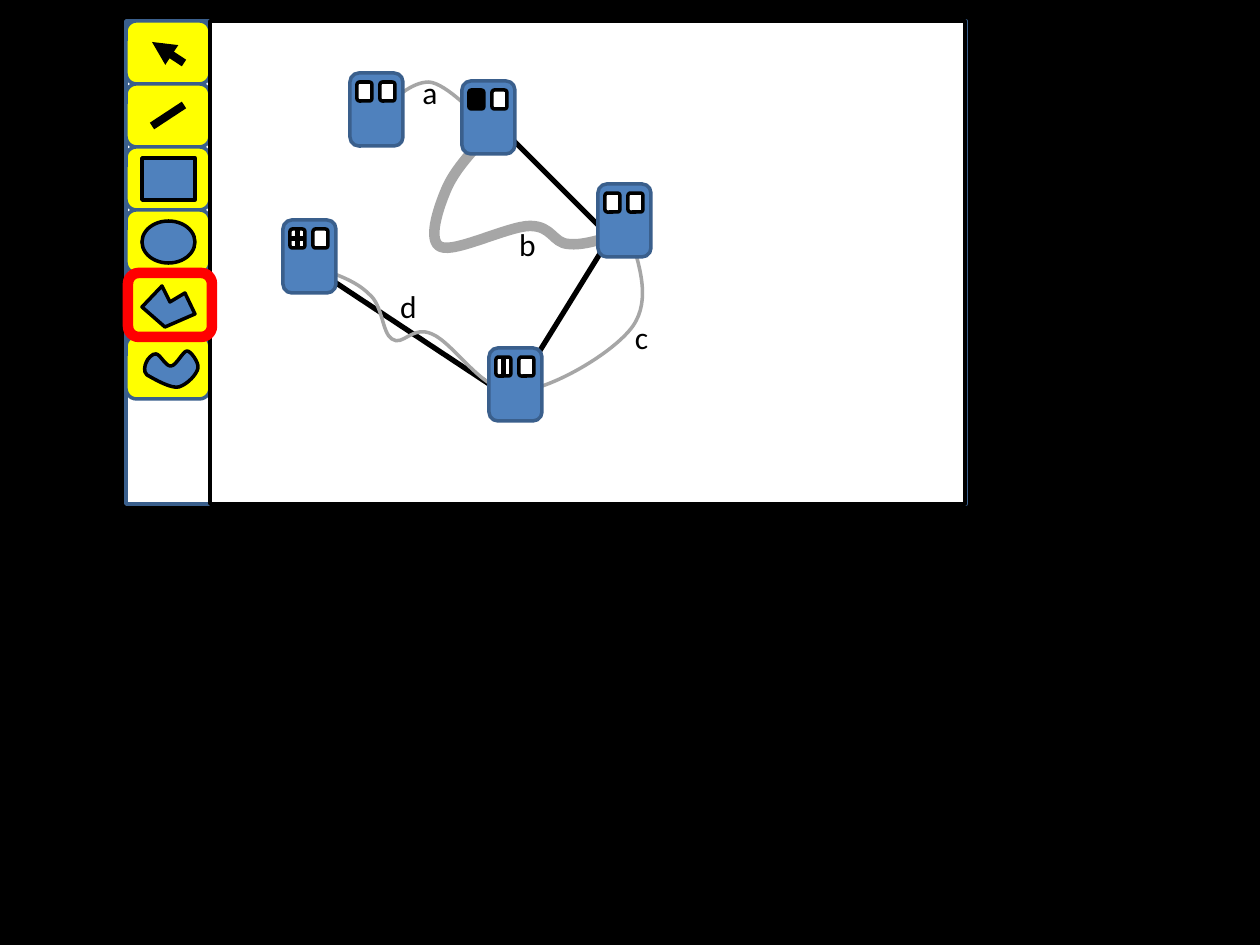
from dataclasses import dataclass

from lxml.etree import SubElement
from pptx import Presentation
from pptx.dml.color import RGBColor
from pptx.enum.shapes import MSO_CONNECTOR, MSO_SHAPE as Shape
from pptx.enum.text import MSO_AUTO_SIZE as AutoSize, PP_ALIGN as Align
from pptx.oxml.ns import qn
from pptx.util import Pt

PX = 914400 / 126  # EMU in one px


@dataclass(frozen=True)
class Theme:
    black: str = "000000"
    white: str = "FFFFFF"
    button: str = "FFFF00"
    border: str = "3A5F8C"
    blue: str = "4F81BD"
    wire: str = "A6A6A6"
    highlight: str = "FF0000"
    font: str = "Calibri"
    label_size: float = 18
    thin: float = 2
    link: float = 3
    tool: float = 4.5
    thick: float = 6


T = Theme()

# Content, in px
WINDOW_BOX = (126, 21, 840, 483)
CANVAS_BOX = (210, 21, 755, 483)
BUTTON_W, BUTTON_H, BUTTON_COUNT = 84, 63, 6
SELECTED_BOX = (128, 273, 84, 64)
ARROW_TOOL = ((184, 63), (152, 42))
LINE_TOOL = ((152, 126), (184, 105))
SHAPE_TOOLS = [(Shape.RECTANGLE, (142, 158, 53, 42)), (Shape.OVAL, (142, 221, 53, 42))]
POLYGON_TOOL = [(142, 307), (162, 286), (170, 302), (185, 293), (195, 314), (165, 327)]
# Curves: a start point, then two control points and an end point per segment
CURVE_TOOL = [(147, 375), (143, 372), (145, 365), (146, 363), (147, 359), (153, 353),
              (156, 354), (160, 354), (166, 367), (171, 366), (176, 366), (183, 351),
              (187, 351), (191, 351), (199, 363), (198, 368), (197, 374), (188, 384),
              (179, 387), (171, 389), (154, 379), (147, 375)]
WIRE_A = [(378, 115), (394, 98), (412, 82), (429, 82), (446, 83), (480, 118), (481, 123)]
WIRE_B = [(485, 137), (469, 155), (454, 171), (446, 190), (438, 209), (427, 242),
          (441, 247), (455, 253), (509, 226), (530, 226), (552, 226), (553, 243),
          (568, 244), (583, 246), (602, 239), (620, 234)]
WIRE_CD = [(629, 232), (640, 266), (651, 300), (633, 326), (614, 353), (549, 391),
           (515, 392), (483, 393), (454, 343), (432, 334), (412, 325), (403, 347),
           (392, 339), (382, 333), (383, 305), (369, 294), (355, 280), (333, 273),
           (310, 266)]
LINKS = [((499, 126), (625, 252)), ((614, 231), (510, 399)), ((489, 384), (321, 273))]
DEVICE_W, DEVICE_H = 53, 73
PANE_W, PANE_H, PANE_X, PANE_Y = 15, 19, (7, 30), 9
FIRST_DEVICE = (350, 73)
STRIPED, CROSSED, FILLED = (489, 348), (283, 220), (462, 81)
OTHER_DEVICES = [(598, 184), STRIPED, CROSSED, FILLED]
LABELS = [("a", (410, 67, 40, 50)), ("b", (506, 219, 43, 50)),
          ("c", (622, 312, 39, 50)), ("d", (387, 281, 43, 50))]


def emu(*lengths):
    return [round(v * PX) for v in lengths]


def paint(sp, fill=None, line=T.black, width=T.thin):
    sp.shadow.inherit = False
    if fill:
        sp.fill.solid()
        sp.fill.fore_color.rgb = RGBColor.from_string(fill)
    else:
        sp.fill.background()
    sp.line.color.rgb = RGBColor.from_string(line)
    sp.line.width = Pt(width)
    return sp


def add_box(shapes, kind, box, **style):
    return paint(shapes.add_shape(kind, *emu(*box)), **style)


def add_line(shapes, start, end, width=T.link, arrow=False):
    cx = shapes.add_connector(MSO_CONNECTOR.STRAIGHT, *emu(*start, *end))
    cx.line.color.rgb = RGBColor.from_string(T.black)
    cx.line.width = Pt(width)
    if arrow:
        SubElement(cx.line._get_or_add_ln(), qn("a:tailEnd"), type="triangle")
    SubElement(cx._element.spPr, qn("a:effectLst"))


def add_outline(shapes, points, curved=False, close=False, **style):
    builder = shapes.build_freeform(*points[0], scale=PX)
    builder.add_line_segments(points[1:], close=close)
    sp = builder.convert_to_shape()
    if curved:  # every three line segments become one cubic segment
        steps = list(sp._element.iter(qn("a:lnTo")))
        for first, second, third in zip(steps[::3], steps[1::3], steps[2::3]):
            first.tag = qn("a:cubicBezTo")
            for step in (second, third):
                first.append(step[0])
                step.getparent().remove(step)
    return paint(sp, **style)


def add_device(shapes, x, y):
    group = shapes.add_group_shape().shapes
    add_box(group, Shape.ROUNDED_RECTANGLE, (x, y, DEVICE_W, DEVICE_H),
            fill=T.blue, line=T.border)
    left_fill = T.black if (x, y) == FILLED else T.white
    for dx, fill in zip(PANE_X, (left_fill, T.white)):
        add_box(group, Shape.ROUNDED_RECTANGLE, (x + dx, y + PANE_Y, PANE_W, PANE_H),
                fill=fill)


def add_pane_bars(shapes, device, cross=False):
    x, y = device[0] + PANE_X[0], device[1] + PANE_Y
    mid_x, mid_y = x + PANE_W / 2, y + PANE_H / 2
    add_line(shapes, (mid_x, y), (mid_x, y + PANE_H))
    if cross:
        add_line(shapes, (x, mid_y), (x + PANE_W, mid_y))


def add_text(shapes, text, box, size=T.label_size, color=T.black, align=Align.CENTER):
    tf = shapes.add_textbox(*emu(*box)).text_frame
    tf.word_wrap = False
    tf.auto_size = AutoSize.SHAPE_TO_FIT_TEXT
    p = tf.paragraphs[0]
    p.alignment = align
    r = p.add_run()
    r.text = text
    r.font.name, r.font.size = T.font, Pt(size)
    r.font.color.rgb = RGBColor.from_string(color)


def main():
    prs = Presentation()
    prs.slide_width, prs.slide_height = emu(1260, 945)
    s = prs.slides.add_slide(prs.slide_layouts[6])
    s.background.fill.solid()
    s.background.fill.fore_color.rgb = RGBColor.from_string(T.black)
    shapes = s.shapes

    # Editor window and toolbar
    add_box(shapes, Shape.RECTANGLE, WINDOW_BOX, fill=T.white, line=T.border)
    left, top = WINDOW_BOX[:2]
    for i in range(BUTTON_COUNT):
        add_box(shapes, Shape.ROUNDED_RECTANGLE,
                (left, top + i * BUTTON_H, BUTTON_W, BUTTON_H),
                fill=T.button, line=T.border)
    add_line(shapes, *ARROW_TOOL, width=T.tool, arrow=True)
    add_line(shapes, *LINE_TOOL, width=T.tool)
    for kind, box in SHAPE_TOOLS:
        add_box(shapes, kind, box, fill=T.blue)
    add_outline(shapes, POLYGON_TOOL, close=True, fill=T.blue)
    add_outline(shapes, CURVE_TOOL, curved=True, close=True, fill=T.blue)

    # Canvas frame and selected tool
    add_box(shapes, Shape.RECTANGLE, CANVAS_BOX)
    add_box(shapes, Shape.ROUNDED_RECTANGLE, SELECTED_BOX, line=T.highlight, width=T.thick)

    # Network: wires and links run beneath the devices
    add_outline(shapes, WIRE_A, curved=True, line=T.wire)
    add_outline(shapes, WIRE_B, curved=True, line=T.wire, width=T.thick)
    add_device(shapes, *FIRST_DEVICE)
    for start, end in LINKS:
        add_line(shapes, start, end)
    add_outline(shapes, WIRE_CD, curved=True, line=T.wire)
    for device in OTHER_DEVICES:
        add_device(shapes, *device)

    # Labels and pane patterns
    for text, box in LABELS:
        add_text(shapes, text, box)
    add_pane_bars(shapes, STRIPED)
    add_pane_bars(shapes, CROSSED, cross=True)

    prs.save("out.pptx")


if __name__ == "__main__":
    main()
